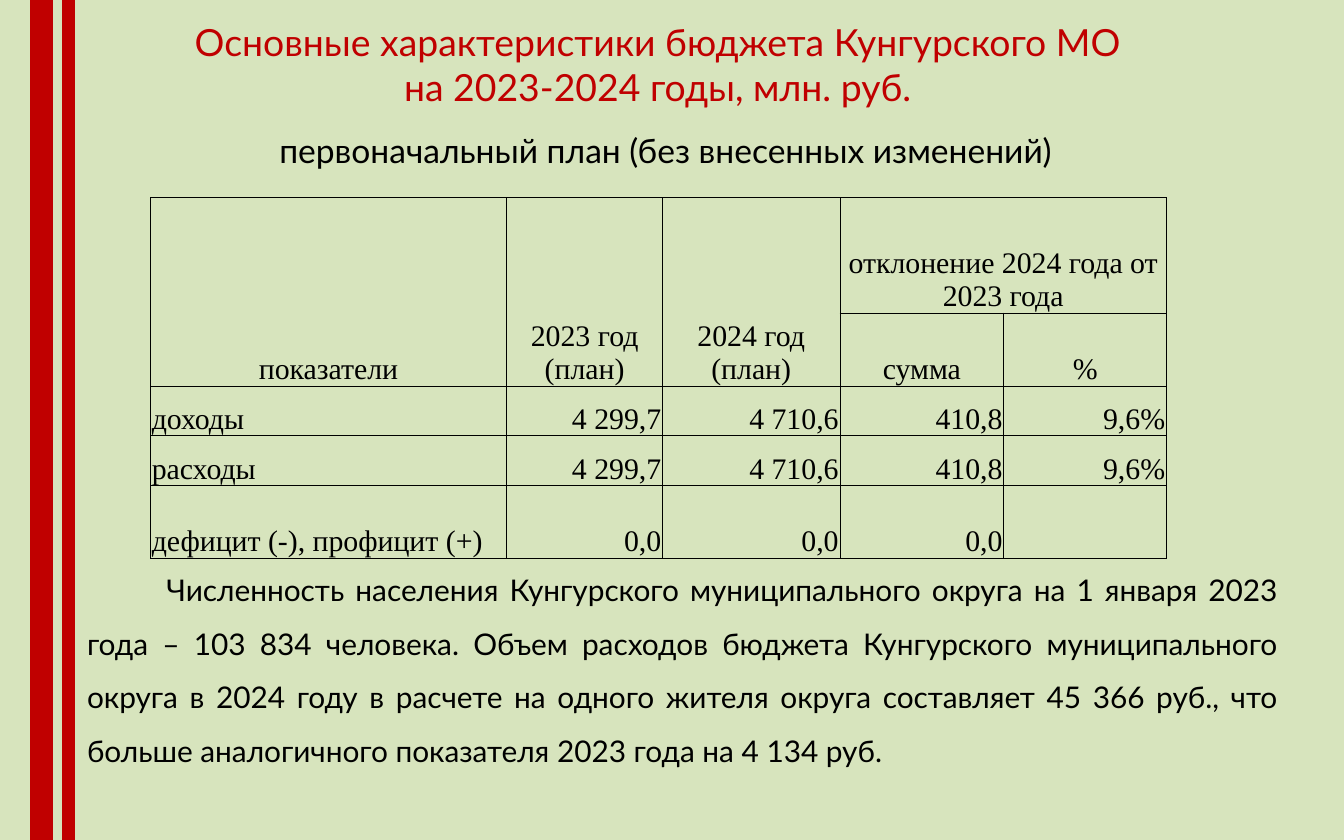
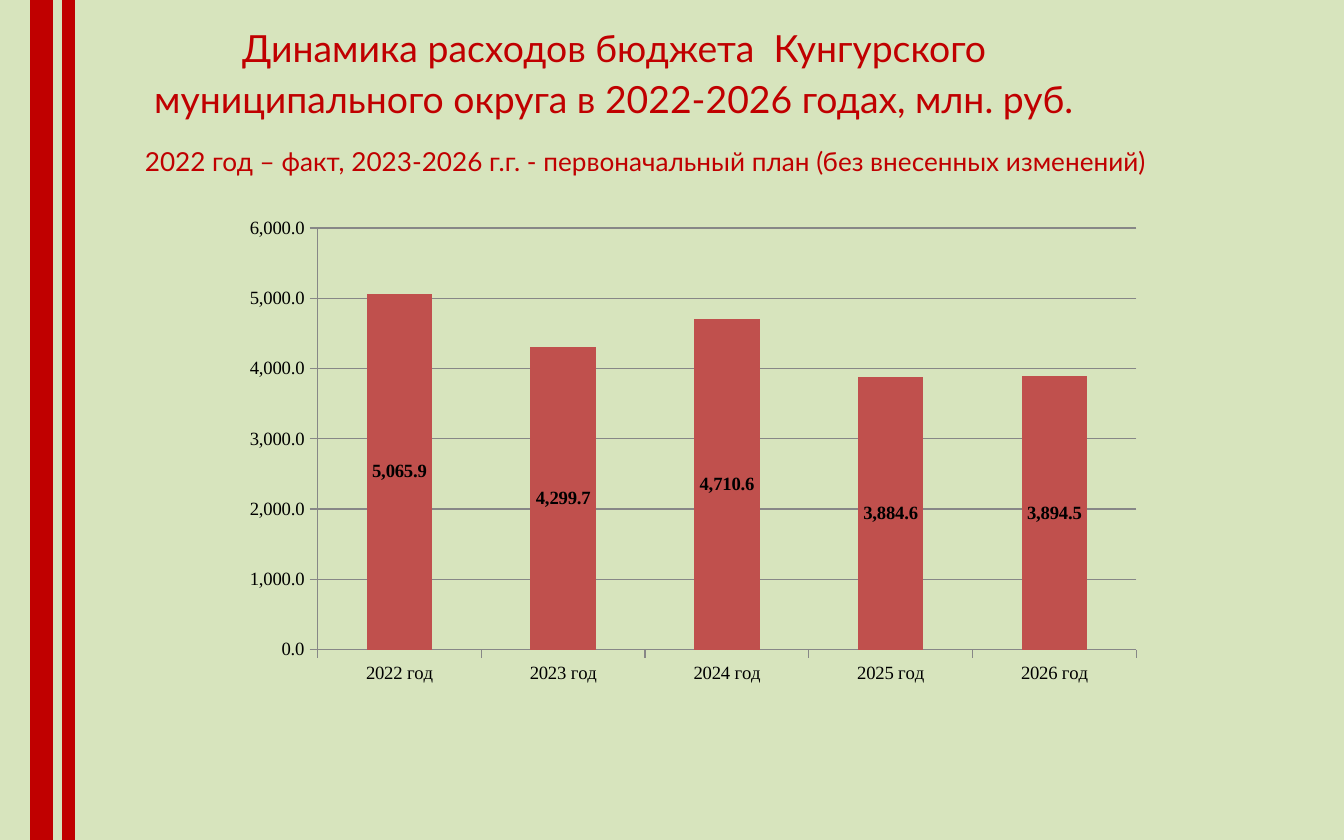
from lxml import etree
from pptx import Presentation
from pptx.chart.data import CategoryChartData
from pptx.dml.color import RGBColor
from pptx.enum.chart import XL_CHART_TYPE as CT, XL_LABEL_POSITION as LP, XL_TICK_MARK as TM
from pptx.enum.shapes import MSO_SHAPE
from pptx.enum.text import MSO_ANCHOR as VA, MSO_AUTO_SIZE as AS, PP_ALIGN as PA
from pptx.oxml import parse_xml
from pptx.oxml.ns import nsdecls, qn
from pptx.util import Inches, Pt

RED, GREEN, BLACK, BAR, GRID = "C00000", "D7E4BD", "000000", "C0504D", "878787"
SANS, SERIF = "Lato", "Times New Roman"


def paint(target, color):
    if hasattr(target, "solid"):
        target.solid()
        target.fore_color.rgb = RGBColor.from_string(color)
    else:
        target.color.rgb = RGBColor.from_string(color)


def write(sp, box, text, size, color, align=PA.LEFT, spacing=1.0, wrap=True):
    sp.left, sp.top, sp.width, sp.height = [Inches(v) for v in box]
    tf = sp.text_frame
    tf.text = text
    tf.word_wrap = wrap
    tf.auto_size = AS.SHAPE_TO_FIT_TEXT
    p = tf.paragraphs[0]
    p.alignment = align
    p.line_spacing = spacing
    p.font.name = SANS
    p.font.size = Pt(size)
    paint(p.font, color)
    return tf


prs = Presentation()
prs.slide_width, prs.slide_height = Inches(10), Inches(6.25)
paint(prs.slide_master.background.fill, GREEN)

titles = [
    ("Основные характеристики бюджета Кунгурского МО на 2023-2024 годы, млн. руб.",
     (1.42, 0.14, 6.95, 0.67), 1.0),
    ("Динамика расходов бюджета  Кунгурского муниципального округа в 2022-2026 годах, млн. руб.",
     (0.67, 0.08, 7.8, 0.88), 1.15),
]
for text, box, spacing in titles:
    s = prs.slides.add_slide(prs.slide_layouts[5])
    write(s.shapes.title, box, text, 20, RED, PA.CENTER, spacing)
    for left, width in [(0.47, 0.08), (0.23, 0.16)]:
        band = s.shapes.add_shape(MSO_SHAPE.RECTANGLE, Inches(left), 0, Inches(width), prs.slide_height)
        band.shadow.inherit = False
        paint(band.fill, RED)
        paint(band.line, RED)
        band.line.width = Pt(0.75)
budget, dynamics = prs.slides

tf = budget.shapes.title.text_frame
tf.margin_left = tf.margin_top = tf.margin_right = tf.margin_bottom = 0
write(budget.shapes.add_textbox(0, 0, 0, 0), (1.98, 0.92, 6.13, 0.4),
      "первоначальный план (без внесенных изменений)", 18, BLACK, wrap=False)

rows = [
    ["показатели", "2023 год (план)", "2024 год (план)", "отклонение 2024 года от 2023 года", ""],
    ["", "", "", "сумма", "%"],
    ["доходы", "4 299,7", "4 710,6", "410,8", "9,6%"],
    ["расходы", "4 299,7", "4 710,6", "410,8", "9,6%"],
    ["дефицит (-), профицит (+)", "0,0", "0,0", "0,0", ""],
]
table = budget.shapes.add_table(5, 5, Inches(1.12), Inches(1.47), Inches(7.56), Inches(2.53)).table
table.first_row = table.horz_banding = False
for column, width in zip(table.columns, [2.65, 1.16, 1.32, 1.22, 1.21]):
    column.width = Inches(width)
for row, height in zip(table.rows, [0.86, 0.37, 0.37, 0.37, 0.54]):
    row.height = Inches(height)
for i, row in enumerate(rows):
    for j, text in enumerate(row):
        cell = table.cell(i, j)
        cell.text = text
        cell.vertical_anchor = VA.BOTTOM
        cell.margin_left = cell.margin_top = cell.margin_right = Inches(0.01)
        cell.margin_bottom = 0
        p = cell.text_frame.paragraphs[0]
        p.alignment = PA.CENTER if i < 2 else PA.RIGHT if j else PA.LEFT
        p.font.name = SERIF
        p.font.size = Pt(16)
        paint(p.font, BLACK)
        tcPr = cell._tc.get_or_add_tcPr()
        for side in ("lnL", "lnR", "lnT", "lnB"):
            tcPr.append(parse_xml(
                f'<a:{side} {nsdecls("a")} w="6350"><a:solidFill><a:srgbClr val="{BLACK}"/>'
                f'</a:solidFill></a:{side}>'))
        cell.fill.background()
for j in range(3):
    table.cell(0, j).merge(table.cell(1, j))
table.cell(0, 3).merge(table.cell(0, 4))

tf = write(budget.shapes.add_textbox(0, 0, 0, 0), (0.55, 4.07, 9.06, 1.72),
           "Численность населения Кунгурского муниципального округа на 1 января 2023 года – "
           "103 834 человека. Объем расходов бюджета Кунгурского муниципального округа в 2024 году "
           "в расчете на одного жителя округа составляет 45 366 руб., что больше аналогичного "
           "показателя 2023 года на 4 134 руб.", 16, BLACK, PA.JUSTIFY, 1.5)
tf.paragraphs[0]._p.get_or_add_pPr().set("indent", str(Inches(0.59)))

data = CategoryChartData()
data.categories = [f"{year} год" for year in range(2022, 2027)]
data.add_series("Series 1", [5065900, 4299700, 4710600, 3884600, 3894500])
chart = dynamics.shapes.add_chart(CT.COLUMN_STACKED, Inches(1.61), Inches(1.47),
                                  Inches(6.85), Inches(3.78), data).chart
chart.has_legend = chart.has_title = False
chart.font.name = SERIF
chart.font.size = Pt(10)
paint(chart.font, BLACK)

plot = chart.plots[0]
plot.gap_width, plot.overlap = 150, 100
plot.vary_by_categories = False
paint(plot.series[0].format.fill, BAR)
plot.has_data_labels = True
labels = plot.data_labels
labels.show_value = True
labels.position = LP.CENTER
labels.font.bold = True
labels.font.name = SERIF
labels.font.size = Pt(10)
paint(labels.font, BLACK)

values = chart.value_axis
values.minimum_scale = 0
values.has_major_gridlines = True
for axis in (chart.category_axis, values):
    axis.major_tick_mark = TM.OUTSIDE
    axis.minor_tick_mark = TM.NONE
for part in (chart.category_axis, values, values.major_gridlines):
    paint(part.format.line, GRID)
    part.format.line.width = Pt(0.75)
for numbers in (labels, values.tick_labels):
    numbers.number_format = "#,##0.0,"
    numbers.number_format_is_linked = False

area = chart._chartSpace.chart.plotArea
for old in area.findall(qn("c:layout")):
    area.remove(old)
layout = etree.Element(qn("c:layout"))
manual = etree.SubElement(layout, qn("c:manualLayout"))
for tag, val in [("layoutTarget", "inner"), ("xMode", "edge"), ("yMode", "edge"),
                 ("x", "0.11"), ("y", "0.06"), ("w", "0.89"), ("h", "0.83")]:
    etree.SubElement(manual, qn(f"c:{tag}")).set("val", val)
area.insert(0, layout)

write(dynamics.shapes.add_textbox(0, 0, 0, 0), (0.98, 1.03, 7.7, 0.34),
      "2022 год – факт, 2023-2026 г.г. - первоначальный план (без внесенных изменений)",
      14, RED, wrap=False)

prs.save("out.pptx")
